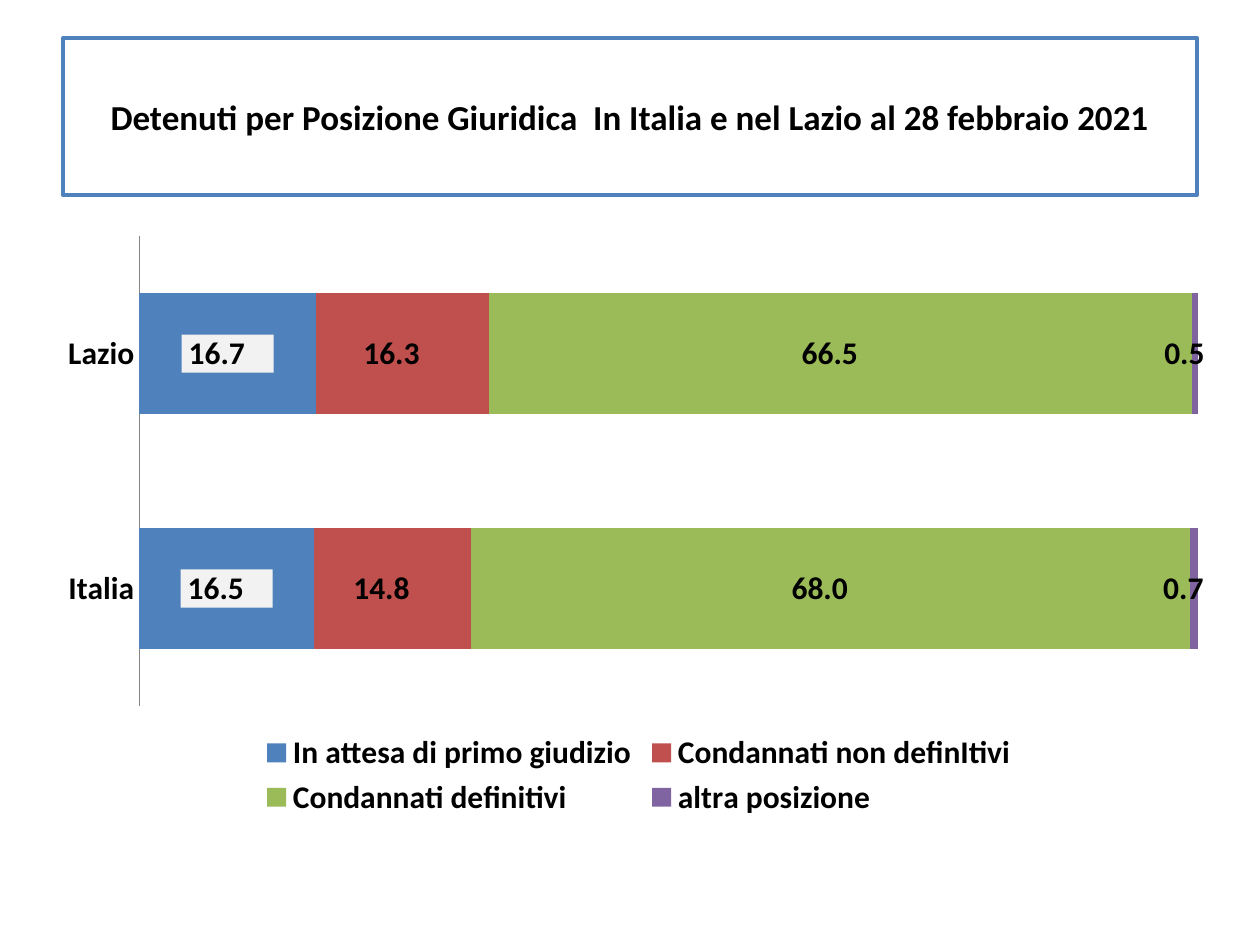
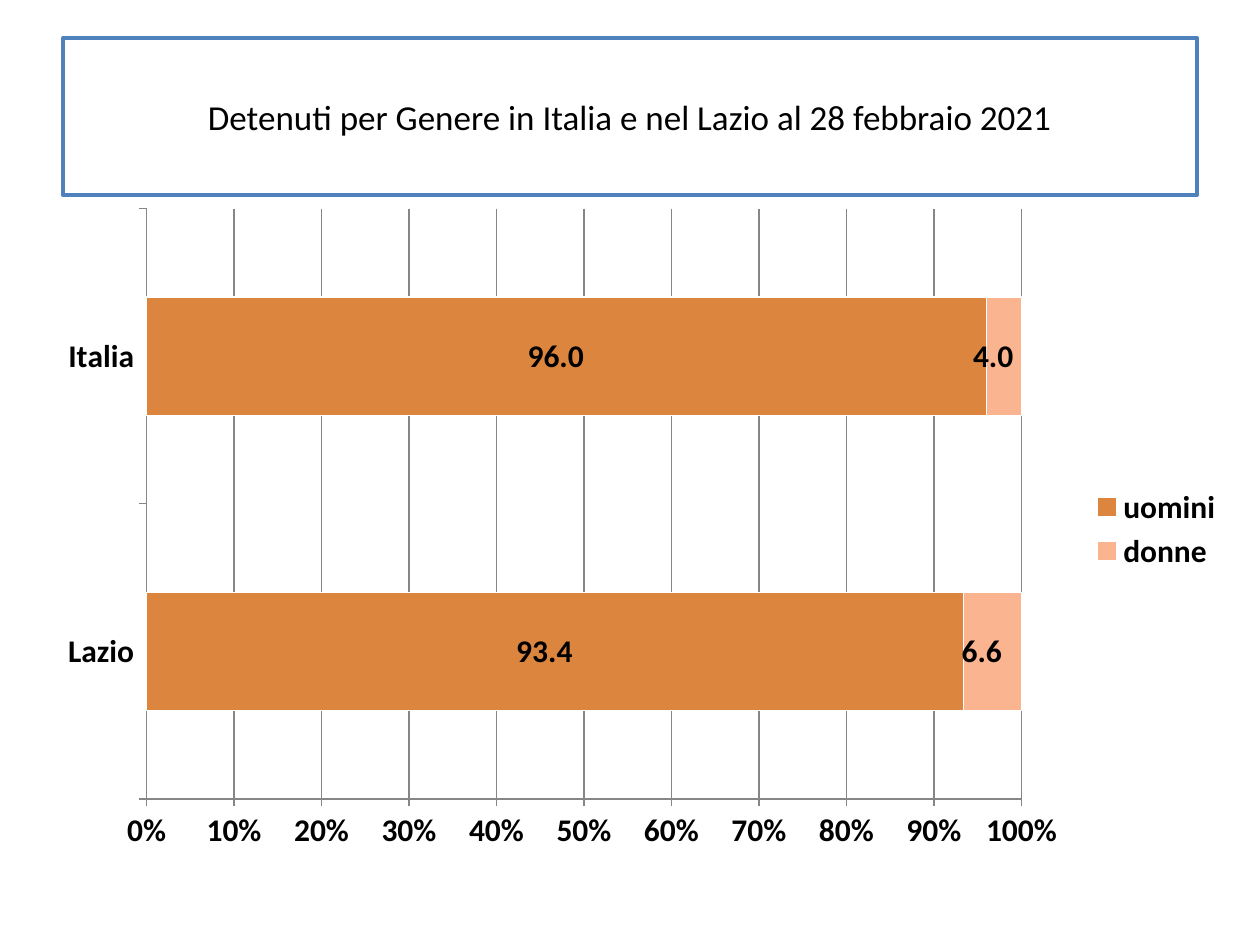
from pptx import Presentation
from pptx.chart.data import CategoryChartData
from pptx.dml.color import RGBColor
from pptx.enum import chart as ch, shapes, text
from pptx.oxml import parse_xml
from pptx.oxml.ns import nsdecls, qn
from pptx.util import Inches, Pt

COLORS = {
    "black": "000000", "white": "FFFFFF", "blue": "4F81BD", "red": "C0504D",
    "green": "9BBB59", "purple": "8064A2", "orange": "DC853E", "peach": "FAB490",
    "label": "F2F2F2", "axis": "868686",
}
FONT = "Calibri"
VALUE_FORMAT = r"_-* #,##0.0\ _€_-;\-* #,##0.0\ _€_-;_-* "

SLIDES = [
    {
        "title": "Detenuti per Posizione Giuridica  In Italia e nel Lazio al 28 febbraio 2021",
        "bold": True,
        "box": (0.35, 1.78, 9.44, 4.75),
        "plot": (0.08, 0.02, 0.89, 0.785),
        "gap": 95,
        "legend": ch.XL_LEGEND_POSITION.BOTTOM,
        "percent_axis": False,
        "series": [
            ("In attesa di primo giudizio", (16.7, 16.5), "blue"),
            ("Condannati non definItivi", (16.3, 14.8), "red"),
            ("Condannati definitivi", (66.5, 68.0), "green"),
            ("altra posizione", (0.5, 0.7), "purple"),
        ],
    },
    {
        "title": "Detenuti per Genere in Italia e nel Lazio al 28 febbraio 2021",
        "bold": False,
        "box": (0.35, 1.55, 9.46, 5.3),
        "plot": (0.086, 0.02, 0.734, 0.884),
        "gap": 150,
        "legend": ch.XL_LEGEND_POSITION.RIGHT,
        "percent_axis": True,
        "series": [
            ("uomini", (93.4, 96.0), "orange"),
            ("donne", (6.6, 4.0), "peach"),
        ],
    },
]


def rgb(name):
    return RGBColor.from_string(COLORS[name])


def place_plot(chart, box):
    """Fix the inner plot area at fractions (x, y, w, h) of the chart."""
    area = chart._chartSpace.find(".//" + qn("c:plotArea"))
    for old in area.findall(qn("c:layout")):
        area.remove(old)
    sizes = "".join(f'<c:{k} val="{v}"/>' for k, v in zip("xywh", box))
    area.insert(0, parse_xml(
        f'<c:layout {nsdecls("c")}><c:manualLayout><c:layoutTarget val="inner"/>'
        f'<c:xMode val="edge"/><c:yMode val="edge"/>{sizes}</c:manualLayout></c:layout>'))


prs = Presentation()
prs.slide_width, prs.slide_height = Inches(10), Inches(7.5)

for page in SLIDES:
    slide = prs.slides.add_slide(prs.slide_layouts[6])

    # Title band
    sp = slide.shapes.add_shape(shapes.MSO_SHAPE.RECTANGLE, Inches(0.5), Inches(0.3),
                                Inches(9), Inches(1.25))
    sp.shadow.inherit = False
    sp.fill.solid()
    sp.fill.fore_color.rgb = rgb("white")
    sp.line.color.rgb = rgb("blue")
    sp.line.width = Pt(2)
    tf = sp.text_frame
    tf.word_wrap = True
    tf.vertical_anchor = text.MSO_ANCHOR.MIDDLE
    p = tf.paragraphs[0]
    p.text = page["title"]
    p.alignment = text.PP_ALIGN.CENTER
    p.font.name, p.font.size, p.font.bold = FONT, Pt(20), page["bold"]
    p.font.color.rgb = rgb("black")

    # Stacked bars
    data = CategoryChartData()
    data.categories = ["Lazio", "Italia"]
    for name, values, _ in page["series"]:
        data.add_series(name, values)
    chart = slide.shapes.add_chart(ch.XL_CHART_TYPE.BAR_STACKED_100,
                                   *map(Inches, page["box"]), data).chart
    chart.has_title = False
    chart.font.name, chart.font.size, chart.font.bold = FONT, Pt(18), True
    chart.font.color.rgb = rgb("black")
    chart.has_legend = True
    chart.legend.position = page["legend"]
    chart.legend.include_in_layout = False
    place_plot(chart, page["plot"])

    plot = chart.plots[0]
    plot.gap_width, plot.overlap = page["gap"], 100
    plot.vary_by_categories = False
    for series, (_, _, color) in zip(plot.series, page["series"]):
        series.format.fill.solid()
        series.format.fill.fore_color.rgb = rgb(color)
        if page["percent_axis"]:
            series.format.line.color.rgb = rgb("white")
            series.format.line.width = Pt(0.75)
        labels = series.data_labels
        labels.show_value = True
        labels.number_format = VALUE_FORMAT
        labels.number_format_is_linked = False
        labels.position = ch.XL_LABEL_POSITION.CENTER
        if color == "blue":
            labels._element.find(qn("c:numFmt")).addnext(parse_xml(
                f'<c:spPr {nsdecls("c", "a")}><a:solidFill>'
                f'<a:srgbClr val="{COLORS["label"]}"/></a:solidFill></c:spPr>'))

    # Axes
    cat, val = chart.category_axis, chart.value_axis
    for axis in (cat, val):
        axis.format.line.color.rgb = rgb("axis")
        axis.format.line.width = Pt(0.75)
        axis.minor_tick_mark = ch.XL_TICK_MARK.NONE
        axis.major_tick_mark = (ch.XL_TICK_MARK.OUTSIDE if page["percent_axis"]
                                else ch.XL_TICK_MARK.NONE)
    cat.reverse_order = not page["percent_axis"]
    val.visible = page["percent_axis"]
    val.has_major_gridlines = page["percent_axis"]
    val.minimum_scale = 0
    if page["percent_axis"]:
        val.major_gridlines.format.line.color.rgb = rgb("axis")
        val.major_gridlines.format.line.width = Pt(0.75)
        val.tick_labels.number_format = "0%"
        val.tick_labels.number_format_is_linked = False

prs.save("out.pptx")
